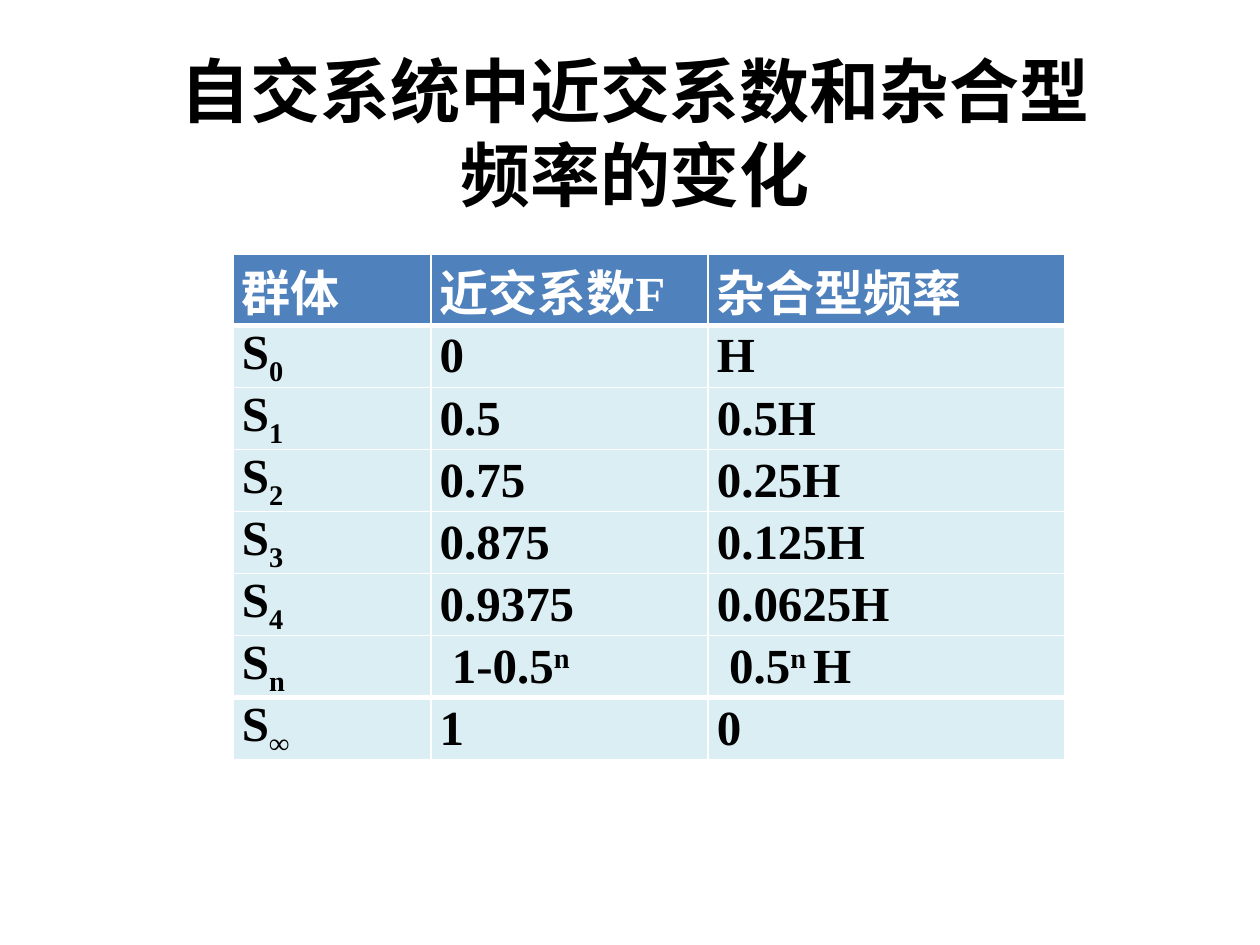
from lxml import etree
from pptx import Presentation
from pptx.dml.color import RGBColor
from pptx.enum.text import MSO_ANCHOR, MSO_AUTO_SIZE, PP_ALIGN
from pptx.oxml.ns import qn
from pptx.util import Inches, Pt

MIDDLE = MSO_ANCHOR.MIDDLE
NO_AUTOFIT = MSO_AUTO_SIZE.NONE
CENTER = PP_ALIGN.CENTER

FONT = "Times New Roman"
BLACK = RGBColor(0x00, 0x00, 0x00)
WHITE = RGBColor(0xFF, 0xFF, 0xFF)
HEADER_BLUE = RGBColor(0x4F, 0x81, 0xBD)
PALE_BLUE = RGBColor(0xDB, 0xEE, 0xF4)

SUB, SUPER = -25, 30  # baseline shift in percent

TITLE = "自交系统中近交系数和杂合型频率的变化"
HEADERS = ["群体", "近交系数F", "杂合型频率"]
# Generation index, inbreeding coefficient, heterozygote frequency;
# a cell is a string or a list of (text, baseline) pairs.
GENERATIONS = [
    ("0", "0", "H"),
    ("1", "0.5", "0.5H"),
    ("2", "0.75", "0.25H"),
    ("3", "0.875", "0.125H"),
    ("4", "0.9375", "0.0625H"),
    ("n", [(" 1-0.5", 0), ("n", SUPER)], [(" 0.5", 0), ("n ", SUPER), ("H", 0)]),
    ("∞", "1", "0"),
]

COLUMN_WIDTHS = [1.57, 2.2, 2.83]
HEADER_HEIGHT, ROW_HEIGHT = 0.55, 0.49
THIN, THICK = 1, 3


def add_span(paragraph, text, size, color, baseline=0):
    span = paragraph.add_run()
    span.text = text
    span.font.name = FONT
    span.font.size = Pt(size)
    span.font.bold = True
    span.font.color.rgb = color
    if baseline:
        span.font._element.set("baseline", str(baseline * 1000))


def set_borders(cell, top, bottom):
    """Draw white borders; the side borders are always thin."""
    properties = cell._tc.get_or_add_tcPr()
    for side, width in (("L", THIN), ("R", THIN), ("T", top), ("B", bottom)):
        line = etree.SubElement(properties, qn(f"a:ln{side}"), w=str(Pt(width)))
        fill = etree.SubElement(line, qn("a:solidFill"))
        etree.SubElement(fill, qn("a:srgbClr"), val=str(WHITE))


def fill_cell(cell, content, color, background, top, bottom):
    set_borders(cell, top, bottom)
    cell.fill.solid()
    cell.fill.fore_color.rgb = background
    cell.vertical_anchor = MIDDLE
    cell.margin_left = cell.margin_right = Inches(0.07)
    cell.margin_top = cell.margin_bottom = 0
    spans = [(content, 0)] if isinstance(content, str) else content
    for text, baseline in spans:
        add_span(cell.text_frame.paragraphs[0], text, 28, color, baseline)


def add_title(page):
    title = page.shapes.title
    title.left, title.top = Inches(1.3), Inches(0.3)
    title.width, title.height = Inches(7.48), Inches(1.48)
    frame = title.text_frame
    frame.word_wrap = True
    frame.auto_size = NO_AUTOFIT
    frame.vertical_anchor = MIDDLE
    frame.paragraphs[0].alignment = CENTER
    add_span(frame.paragraphs[0], TITLE, 40, BLACK)


def add_generation_table(page):
    rows = [HEADERS] + [
        ([("S", 0), (index, SUB)], coefficient, frequency)
        for index, coefficient, frequency in GENERATIONS
    ]
    heights = [HEADER_HEIGHT] + [ROW_HEIGHT] * len(GENERATIONS)
    table = page.shapes.add_table(
        len(rows), len(HEADERS), Inches(1.85), Inches(2.02),
        Inches(sum(COLUMN_WIDTHS)), Inches(sum(heights)),
    ).table
    for column, width in zip(table.columns, COLUMN_WIDTHS):
        column.width = Inches(width)

    last = len(rows) - 1
    thick_lines = (1, last)  # below the header and above the limit row
    for number, contents in enumerate(rows):
        table.rows[number].height = Inches(heights[number])
        top = THICK if number in thick_lines else THIN
        bottom = THICK if number + 1 in thick_lines else THIN
        color, background = (BLACK, PALE_BLUE) if number else (WHITE, HEADER_BLUE)
        for cell, content in zip(table.rows[number].cells, contents):
            fill_cell(cell, content, color, background, top, bottom)


def main():
    deck = Presentation()
    deck.slide_width, deck.slide_height = Inches(10), Inches(7.5)
    page = deck.slides.add_slide(deck.slide_layouts.get_by_name("Title Only"))
    add_title(page)
    add_generation_table(page)
    deck.save("out.pptx")


if __name__ == "__main__":
    main()
